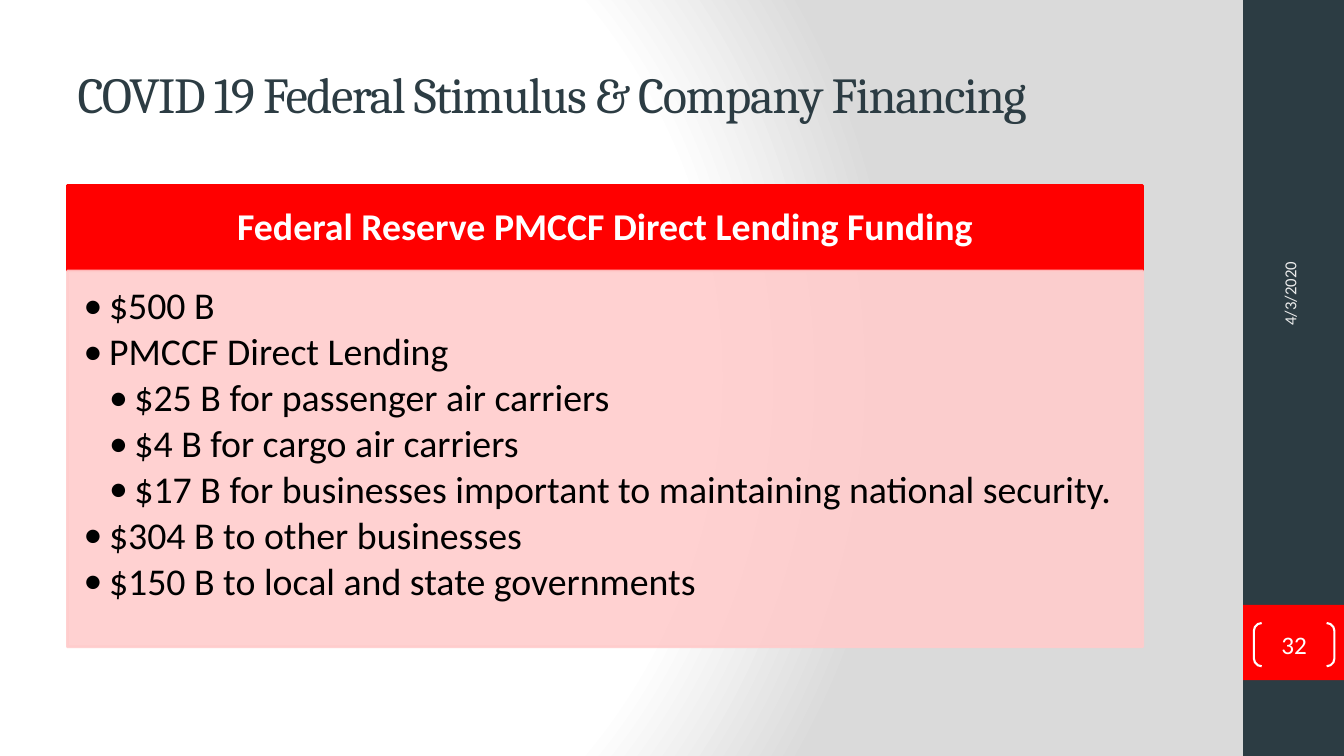
from lxml import etree
from pptx import Presentation
from pptx.dml.color import RGBColor
from pptx.enum.shapes import MSO_SHAPE
from pptx.enum.text import MSO_ANCHOR, MSO_AUTO_SIZE, PP_ALIGN
from pptx.oxml import parse_xml
from pptx.oxml.ns import nsdecls, qn
from pptx.util import Cm, Pt

RECTANGLE = MSO_SHAPE.RECTANGLE
BRACKETS = MSO_SHAPE.DOUBLE_BRACKET
TOP, MIDDLE = MSO_ANCHOR.TOP, MSO_ANCHOR.MIDDLE
LEFT, CENTER = PP_ALIGN.LEFT, PP_ALIGN.CENTER
NO_AUTOFIT = MSO_AUTO_SIZE.NONE

WHITE = RGBColor(0xFF, 0xFF, 0xFF)
BLACK = RGBColor(0x00, 0x00, 0x00)
SLATE = RGBColor(0x2C, 0x3C, 0x43)
RED = RGBColor(0xFF, 0x00, 0x00)
PINK = RGBColor(0xFF, 0xCC, 0xCC)
LIGHT_GREY = RGBColor(0xEB, 0xEB, 0xEB)
BACKDROP_GREY = RGBColor(0xDA, 0xDA, 0xDA)

BULLET_STEP = Cm(0.64)
FUNDING_ITEMS = [
    (1, "$500 B"),
    (1, "PMCCF Direct Lending"),
    (2, "$25 B for passenger air carriers"),
    (2, "$4 B for cargo air carriers"),
    (2, "$17 B for businesses important to maintaining national security."),
    (1, "$304 B to other businesses"),
    (1, "$150 B to local and state governments"),
]


def set_background(slide):
    """Give the slide a circular gradient from white to grey."""
    stops = "".join(
        f'<a:gs pos="{position * 1000}"><a:srgbClr val="{color}"/></a:gs>'
        for position, color in [(0, WHITE), (75, WHITE), (100, BACKDROP_GREY)]
    )
    background = parse_xml(
        f'<p:bg {nsdecls("p", "a")}><p:bgPr><a:gradFill rotWithShape="1">'
        f'<a:gsLst>{stops}</a:gsLst><a:path path="circle">'
        '<a:fillToRect l="20000" t="50000" r="100000" b="50000"/></a:path>'
        '</a:gradFill><a:effectLst/></p:bgPr></p:bg>'
    )
    slide.element.cSld.insert(0, background)


def set_opacity(shape, percent):
    """Make the fill and the line of a shape partly transparent."""
    for color in shape.element.spPr.iter(qn("a:srgbClr")):
        etree.SubElement(color, qn("a:alpha")).set("val", str(percent * 1000))


def add_box(slide, left, top, width, height, *, kind=RECTANGLE, fill=None,
            line=None, line_width=2):
    shape = slide.shapes.add_shape(kind, left, top, width, height)
    shape.shadow.inherit = False
    if fill is None:
        shape.fill.background()
    else:
        shape.fill.solid()
        shape.fill.fore_color.rgb = fill
    if line is None:
        shape.line.fill.background()
    else:
        shape.line.color.rgb = line
        shape.line.width = Pt(line_width)
    return shape


def set_frame(frame, *, anchor=MIDDLE, margins=None):
    """Set wrapping, anchor and left, top, right, bottom margins."""
    frame.word_wrap = True
    frame.auto_size = NO_AUTOFIT
    frame.vertical_anchor = anchor
    if margins:
        (frame.margin_left, frame.margin_top,
         frame.margin_right, frame.margin_bottom) = map(Cm, margins)


def write_text(paragraph, text, *, size, color, font="Calibri", bold=False,
               align=LEFT, line_spacing=1.0, space_after=0, tracking=None):
    paragraph.alignment = align
    paragraph.line_spacing = line_spacing
    paragraph.space_after = Pt(space_after)
    run = paragraph.add_run()
    run.text = text
    run.font.name = font
    run.font.size = Pt(size)
    run.font.bold = bold
    run.font.color.rgb = color
    if tracking is not None:
        run.font._element.set("spc", str(tracking * 100))


def add_bullet(paragraph, level):
    paragraph.level = level - 1
    properties = paragraph._p.get_or_add_pPr()
    properties.set("marL", str(BULLET_STEP * level))
    properties.set("indent", str(-BULLET_STEP))
    etree.SubElement(properties, qn("a:buFont")).set("typeface", "Calibri")
    etree.SubElement(properties, qn("a:buChar")).set("char", "•")


def add_title(slide, text):
    title = slide.shapes.title
    title.left, title.top = Cm(1.7), Cm(0.76)
    title.width, title.height = Cm(28.22), Cm(3.18)
    set_frame(title.text_frame)
    write_text(title.text_frame.paragraphs[0], text, size=36, color=SLATE,
               font="Cambria", tracking=-1)


def add_sidebar(slide, date, number):
    left, width = Cm(31.33), Cm(2.54)
    add_box(slide, left, 0, width, Cm(19.05), fill=SLATE)
    add_box(slide, left, Cm(15.24), width, Cm(1.9), fill=RED)

    date_box = slide.shapes.add_textbox(Cm(29.11), Cm(4.39), Cm(6.78), Cm(1.35))
    date_box.rotation = 270
    set_frame(date_box.text_frame)
    write_text(date_box.text_frame.paragraphs[0], date, size=12, color=LIGHT_GREY)

    badge = add_box(slide, Cm(31.6), Cm(15.7), Cm(2.03), Cm(1.09),
                    kind=BRACKETS, line=WHITE, line_width=1.5)
    badge.adjustments[0] = 0.18
    set_frame(badge.text_frame, margins=(0, 0, 0, 0))
    write_text(badge.text_frame.paragraphs[0], number, size=18, color=WHITE,
               align=CENTER)


def add_funding_panel(slide, heading, items):
    left, width = Cm(1.7), Cm(27.1)
    header = add_box(slide, left, Cm(4.67), width, Cm(2.16), fill=RED, line=RED)
    set_frame(header.text_frame, margins=(0.53, 0.3, 0.53, 0.3))
    write_text(header.text_frame.paragraphs[0], heading, size=27, color=WHITE,
               bold=True, align=CENTER, line_spacing=0.9)

    body = add_box(slide, left, Cm(6.83), width, Cm(9.47), fill=PINK, line=PINK)
    set_opacity(body, 90)
    frame = body.text_frame
    set_frame(frame, anchor=TOP, margins=(0.41, 0.41, 0.53, 0.61))
    for index, (level, text) in enumerate(items):
        paragraph = frame.add_paragraph() if index else frame.paragraphs[0]
        add_bullet(paragraph, level)
        write_text(paragraph, text, size=27, color=BLACK, line_spacing=0.9,
                   space_after=3.6)


def main():
    presentation = Presentation()
    presentation.slide_width, presentation.slide_height = Cm(33.87), Cm(19.05)
    slide = presentation.slides.add_slide(presentation.slide_layouts[5])
    set_background(slide)
    add_title(slide, "COVID 19 Federal Stimulus & Company Financing")
    add_sidebar(slide, "4/3/2020", "32")
    add_funding_panel(slide, "Federal Reserve PMCCF Direct Lending Funding",
                      FUNDING_ITEMS)
    presentation.save("out.pptx")


if __name__ == "__main__":
    main()
